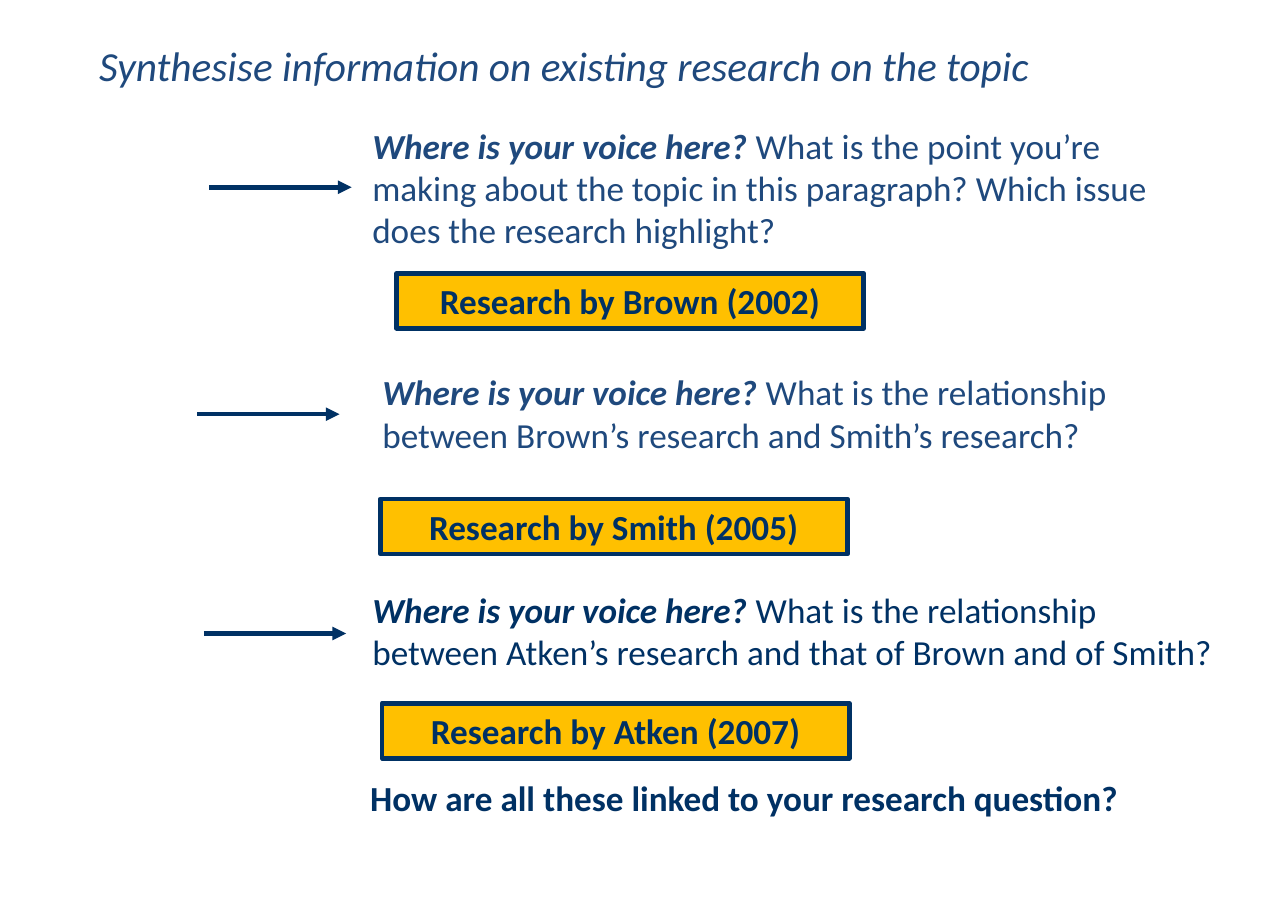
from lxml.etree import SubElement
from pptx import Presentation
from pptx.dml.color import RGBColor
from pptx.enum.shapes import MSO_CONNECTOR as Connector, MSO_SHAPE as Shape
from pptx.enum.text import MSO_ANCHOR as Anchor, MSO_AUTO_SIZE as AutoSize, PP_ALIGN as Align
from pptx.oxml.ns import qn
from pptx.util import Pt

COLOURS = {"navy": "003164", "blue": "1F497D", "gold": "FFC000"}
LINE_WIDTH = 3
ARROW_LENGTH = 93
BOX_SIZE = (305.3, 36)
QUESTION = "Where is your voice here? "


def colour(name):
    return RGBColor.from_string(COLOURS[name])


class SlideBuilder:
    """Holds the text style and the slide being built."""

    font_name = "Calibri"
    font_size = 23
    frame_format = {
        "margin_left": Pt(7.9), "margin_right": Pt(7.9),
        "margin_top": Pt(4), "margin_bottom": Pt(4),
        "word_wrap": True, "auto_size": AutoSize.NONE,
        "vertical_anchor": Anchor.TOP,
    }

    def __init__(self, slide):
        self.slide = slide

    def fill_text(self, shape, runs, colour_name, size=font_size, align=Align.LEFT):
        """Fill a shape with one paragraph of (text, bold, italic) runs."""
        frame = shape.text_frame
        for name, value in self.frame_format.items():
            setattr(frame, name, value)
        paragraph = frame.paragraphs[0]
        paragraph.alignment = align
        for text, bold, italic in runs:
            run = paragraph.add_run()
            run.text = text
            font_format = {"name": self.font_name, "size": Pt(size),
                           "bold": bold, "italic": italic}
            for name, value in font_format.items():
                setattr(run.font, name, value)
            run.font.color.rgb = colour(colour_name)

    def title(self, text, left, top, width, height):
        shape = self.slide.shapes.title
        position = {"left": left, "top": top, "width": width, "height": height}
        for name, value in position.items():
            setattr(shape, name, Pt(value))
        self.fill_text(shape, [(text, False, True)], "blue", size=27)

    def text(self, runs, colour_name, left, top, width, height):
        shape = self.slide.shapes.add_textbox(Pt(left), Pt(top), Pt(width), Pt(height))
        self.fill_text(shape, runs, colour_name)

    def box(self, text, left, top):
        width, height = BOX_SIZE
        shape = self.slide.shapes.add_shape(
            Shape.RECTANGLE, Pt(left), Pt(top), Pt(width), Pt(height))
        shape.shadow.inherit = False
        shape.fill.solid()
        shape.fill.fore_color.rgb = colour("gold")
        shape.line.color.rgb = colour("navy")
        shape.line.width = Pt(LINE_WIDTH)
        self.fill_text(shape, [(text, True, False)], "navy", align=Align.CENTER)

    def arrow(self, left, top):
        connector = self.slide.shapes.add_connector(
            Connector.STRAIGHT, Pt(left), Pt(top), Pt(left + ARROW_LENGTH), Pt(top))
        connector.line.color.rgb = colour("navy")
        connector.line.width = Pt(LINE_WIDTH)
        properties = connector.element.spPr
        SubElement(properties.find(qn("a:ln")), qn("a:tailEnd"), type="triangle")
        SubElement(properties, qn("a:effectLst"))


def main():
    presentation = Presentation()
    presentation.slide_width = Pt(841.7)
    presentation.slide_height = Pt(595.4)
    title_only = presentation.slide_layouts[5]
    builder = SlideBuilder(presentation.slides.add_slide(title_only))

    # Title
    builder.title("Synthesise information on existing research on the topic",
                  56.9, 22.3, 735.8, 41)

    # Cited research
    for text, left, top in [
        ("Research by Brown (2002)", 259.2, 178.6),
        ("Research by Smith (2005)", 248.6, 326.1),
        ("Research by Atken (2007)", 249.8, 459.6),
    ]:
        builder.box(text, left, top)

    # Questions about the writer's voice
    for text, colour_name, position in [
        ("What is the point you’re making about the topic in this paragraph? "
         "Which issue does the research highlight?", "blue", (235.4, 77, 556.6, 92.2)),
        ("What is the relationship between Brown’s research and Smith’s research?",
         "blue", (241.9, 238.3, 570.2, 64.8)),
        ("What is the relationship between Atken’s research and that of Brown "
         "and of Smith?", "navy", (235.4, 380.2, 570.2, 64.8)),
    ]:
        builder.text([(QUESTION, True, True), (text, False, False)],
                     colour_name, *position)

    # Arrows pointing at the questions
    for left, top in [(136.8, 122.4), (128.9, 270.7), (133.2, 414)]:
        builder.arrow(left, top)

    # Closing question
    builder.text([("How are all these linked to your research question?", True, False)],
                 "navy", 234, 503.3, 589.7, 36)

    presentation.save("out.pptx")


if __name__ == "__main__":
    main()
